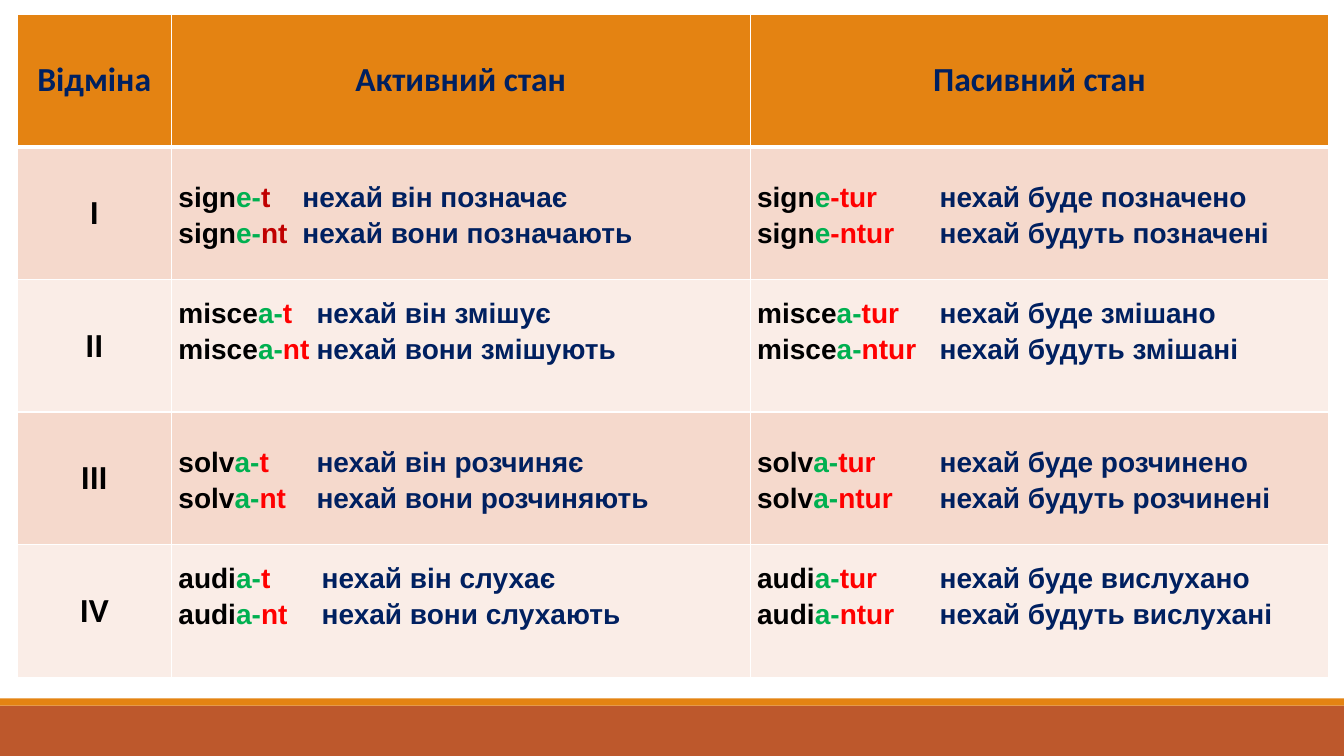
"""Build a slide with a table of Latin subjunctive forms by conjugation."""
from lxml import etree
from pptx import Presentation
from pptx import util as u
from pptx.dml.color import RGBColor
from pptx.enum import shapes, text
from pptx.oxml import ns

COLORS = {
    "orange": "E48312", "rust": "BD582C", "peach": "F5D9CC", "cream": "FAEDE7",
    "navy": "002060", "black": "000000", "green": "00B050", "red": "FF0000",
    "dark red": "C00000", "white": "FFFFFF",
}
HEADERS = ["Відміна", "Активний стан", "Пасивний стан"]
PASSIVE_TAB = 1.81
CONJUGATIONS = [
    {"numeral": "I", "stem": "sign", "active tab": 1.23, "active color": "dark red", "lift": 0,
     "active": [("e-", "t", "нехай він позначає"), ("e-", "nt", "нехай вони позначають")],
     "passive": [("e", "-tur", "нехай буде позначено"), ("e", "-ntur", "нехай будуть позначені")]},
    {"numeral": "II", "stem": "misce", "active tab": 1.37, "active color": "red", "lift": 0.32,
     "active": [("a-", "t", "нехай він змішує"), ("a-", "nt", "нехай вони змішують")],
     "passive": [("a-", "tur", "нехай буде змішано"), ("a-", "ntur", "нехай будуть змішані")]},
    {"numeral": "III", "stem": "solv", "active tab": 1.37, "active color": "red", "lift": 0,
     "active": [("a-", "t", "нехай він розчиняє"), ("a-", "nt", "нехай вони розчиняють")],
     "passive": [("a-", "tur", "нехай буде розчинено"), ("a-", "ntur", "нехай будуть розчинені")]},
    {"numeral": "IV", "stem": "audі", "active tab": 1.42, "active color": "red", "lift": 0.32,
     "active": [("a-", "t", "нехай він слухає"), ("a-", "nt", "нехай вони слухають")],
     "passive": [("a-", "tur", "нехай буде вислухано"), ("a-", "ntur", "нехай будуть вислухані")]},
]


def format_run(run, font_name, size, color):
    run.font.name = font_name
    run.font.size = u.Pt(size)
    run.font.bold = True
    run.font.color.rgb = RGBColor.from_string(COLORS[color])


def prepare_cell(cell, fill, top_width, bottom_width):
    cell.vertical_anchor = text.MSO_ANCHOR.MIDDLE
    properties = cell._tc.get_or_add_tcPr()
    for side, width in (("L", 1), ("R", 1), ("T", top_width), ("B", bottom_width)):
        line = etree.SubElement(properties, ns.qn(f"a:ln{side}"), w=str(u.Pt(width)))
        line_fill = etree.SubElement(line, ns.qn("a:solidFill"))
        etree.SubElement(line_fill, ns.qn("a:srgbClr"), val=COLORS["white"])
    cell.fill.solid()
    cell.fill.fore_color.rgb = RGBColor.from_string(COLORS[fill])


presentation = Presentation()
presentation.slide_width = u.Inches(13.33)
presentation.slide_height = u.Inches(7.5)
slide = presentation.slides.add_slide(presentation.slide_layouts[6])

for top, height, color in ((7, 0.5, "rust"), (6.93, 0.07, "orange")):
    bar = slide.shapes.add_shape(
        shapes.MSO_SHAPE.RECTANGLE, 0, u.Inches(top), presentation.slide_width, u.Inches(height))
    bar.shadow.inherit = False
    bar.fill.solid()
    bar.fill.fore_color.rgb = RGBColor.from_string(COLORS[color])
    bar.line.fill.background()

table = slide.shapes.add_table(
    len(CONJUGATIONS) + 1, len(HEADERS),
    u.Inches(0.17), u.Inches(0.14), u.Inches(13.01), u.Inches(6.58)).table
for column, width in zip(table.columns, (1.53, 5.74, 5.74)):
    column.width = u.Inches(width)

for column_index, header in enumerate(HEADERS):
    cell = table.cell(0, column_index)
    prepare_cell(cell, "orange", 1, 3)
    cell.text_frame.text = header
    paragraph = cell.text_frame.paragraphs[0]
    paragraph.alignment = text.PP_ALIGN.CENTER
    format_run(paragraph.runs[0], "Calibri", 24, "navy")

for row_index, conjugation in enumerate(CONJUGATIONS, start=1):
    fill = "peach" if row_index % 2 else "cream"
    top_width = 3 if row_index == 1 else 1
    numeral_cell = table.cell(row_index, 0)
    prepare_cell(numeral_cell, fill, top_width, 1)
    numeral_cell.text_frame.text = conjugation["numeral"]
    paragraph = numeral_cell.text_frame.paragraphs[0]
    paragraph.alignment = text.PP_ALIGN.CENTER
    format_run(paragraph.runs[0], "Calibri", 24, "black")

    voices = (("active", conjugation["active tab"], conjugation["active color"]),
              ("passive", PASSIVE_TAB, "red"))
    for column_index, (voice, tab, ending_color) in enumerate(voices, start=1):
        cell = table.cell(row_index, column_index)
        prepare_cell(cell, fill, top_width, 1)
        cell.margin_left = cell.margin_right = u.Inches(0.07)
        cell.margin_top = 0
        cell.margin_bottom = u.Inches(conjugation["lift"])
        for form_index, (vowel, ending, translation) in enumerate(conjugation[voice]):
            frame = cell.text_frame
            paragraph = frame.add_paragraph() if form_index else frame.paragraphs[0]
            paragraph.line_spacing = 1.15
            tab_list = etree.SubElement(paragraph._p.get_or_add_pPr(), ns.qn("a:tabLst"))
            etree.SubElement(tab_list, ns.qn("a:tab"), pos=str(u.Inches(tab)), algn="l")
            parts = ((conjugation["stem"], "black"), (vowel, "green"),
                     (ending + "\t", ending_color), (translation, "navy"))
            for words, color in parts:
                run = paragraph.add_run()
                run.text = words
                format_run(run, "Arial", 20, color)

for row in table.rows:
    row.height = u.Inches(6.58 / len(table.rows))

presentation.save("out.pptx")
